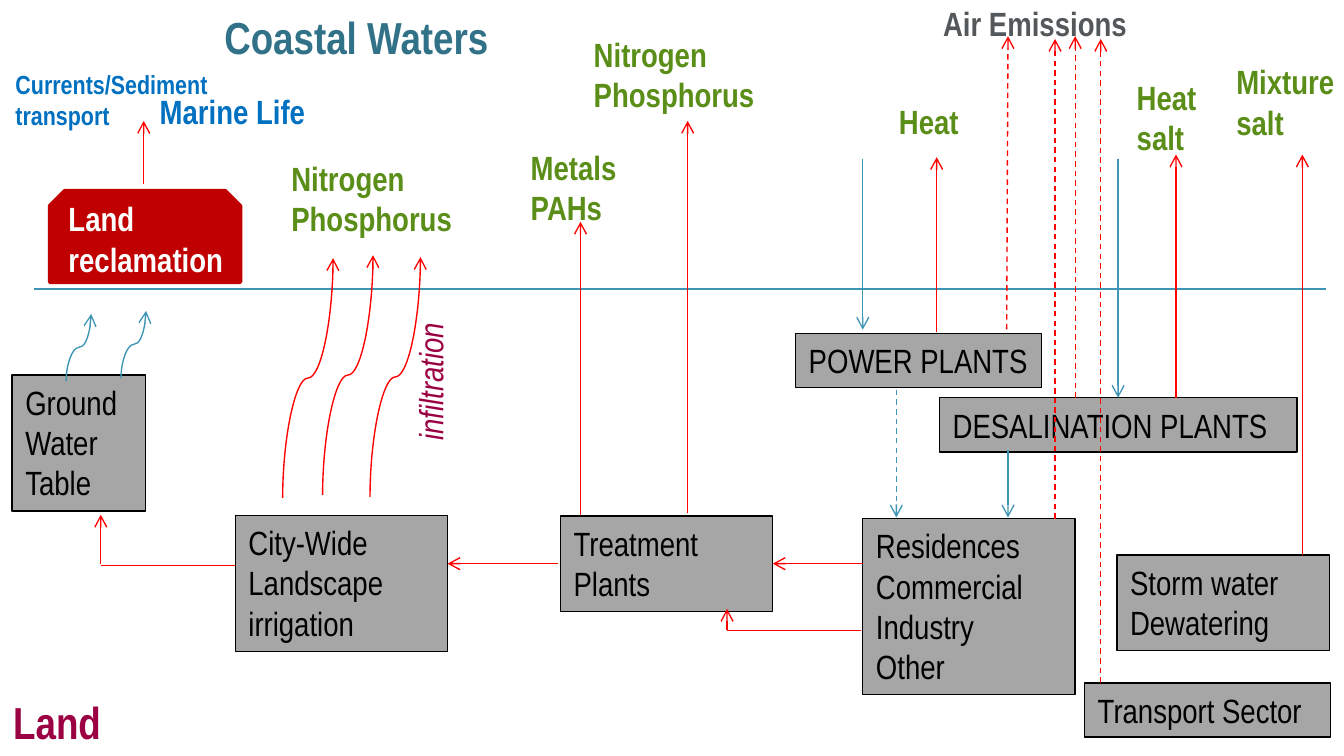
"""Builds a slide of the flows between a city's land uses, coastal waters and air."""
from typing import NamedTuple, Optional

from lxml.etree import SubElement
from pptx import Presentation
from pptx.dml.color import RGBColor
from pptx.enum.dml import MSO_LINE
from pptx.enum.shapes import MSO_CONNECTOR as Link, MSO_SHAPE as Preset
from pptx.enum.text import MSO_ANCHOR as Anchor, MSO_AUTO_SIZE as AutoSize, PP_ALIGN as Align
from pptx.oxml.ns import qn
from pptx.util import Pt

FONT = "Arial Narrow"
COLORS = {
    "black": "000000", "white": "FFFFFF", "gray": "A6A6A6", "slate": "54585A",
    "red": "FF0000", "dark_red": "C00000", "teal": "3E96B4", "deep_teal": "327288",
    "green": "5A8E18", "blue": "0070C0", "plum": "9B0042",
}


class Box(NamedTuple):
    text: str
    left: float
    top: float
    width: float
    height: float


class Label(NamedTuple):
    text: str
    left: float
    top: float
    width: float
    height: float
    color: str = "green"
    size: float = 18


class Flow(NamedTuple):
    x1: float
    y1: float
    x2: float
    y2: float
    color: str = "red"
    dashed: bool = False
    arrow: bool = True
    target: Optional[str] = None
    side: int = 0


class Curve(NamedTuple):
    x: float
    bottom: float
    rise: float
    run: float
    color: str


TITLE = Label("Coastal Waters", 113, 1.4, 198, 36, "deep_teal", 24)
RECLAMATION = Box("Land reclamation", 26.6, 102.2, 102.2, 49)
INFILTRATION = Label("infiltration", 216, 172, 36, 71.3, "plum")

BOXES = [
    Box("POWER PLANTS", 426.2, 178.6, 131.8, 29),
    Box("DESALINATION PLANTS", 503.3, 213.1, 191.5, 29),
    Box("Residences\nCommercial\nIndustry\nOther", 462.2, 277.9, 113.8, 94.3),
    Box("Treatment Plants", 300.2, 276.5, 113.8, 51),
    Box("City-Wide Landscape irrigation", 126, 276, 113.8, 73),
    Box("Ground Water Table", 6.5, 201, 71.5, 72.9),
    Box("Storm water\nDewatering", 598.3, 297.4, 113.8, 51),
    Box("Transport Sector", 581, 365.8, 131.8, 29),
]

LABELS = [
    Label("Land", 0, 368.6, 198, 36, "plum", 24),
    Label("Nitrogen Phosphorus", 311, 14.4, 113.8, 51),
    Label("Nitrogen Phosphorus", 149, 80.8, 113.8, 51),
    Label("Heat", 474.5, 50.4, 55.4, 29),
    Label("Heat salt", 601.9, 37.4, 55.4, 51),
    Label("Mixture\vsalt", 655.2, 29.2, 70.6, 51),
    Label("Metals\nPAHs", 277.2, 74.9, 63.4, 51),
    Label("Marine Life", 78.5, 45.4, 113.8, 29, "blue"),
    Label("Currents/Sediment transport", 1.2, 33.1, 121.7, 41, "blue", 14),
    Label("Air Emissions", 498.2, -2.2, 126.7, 29, "slate"),
]

FLOWS = [
    Flow(18, 154.8, 710.6, 154.8, "teal", arrow=False),
    Flow(462.2, 85, 462.2, 176.6, "teal"),
    Flow(599, 85, 599, 213.1, "teal"),
    Flow(480.2, 208.8, 480.2, 277.2, "teal", dashed=True),
    Flow(540, 241.2, 540, 277.2, "teal"),
    Flow(462.2, 302, 414, 302, target="Treatment Plants", side=3),
    Flow(298.8, 302, 239.8, 302),
    Flow(368.4, 275, 368.4, 64.8),
    Flow(501.8, 177.8, 501.8, 84.2),
    Flow(630, 213.1, 630, 82.8),
    Flow(311, 275.8, 311, 118.8),
    Flow(697.7, 297.4, 697.7, 82.8),
    Flow(77, 98.6, 77, 64.8),
    Flow(54, 303.1, 126, 303.1, arrow=False),
    Flow(54, 302, 54, 275.8),
    Flow(389.5, 337.7, 461.5, 337.7, arrow=False),
    Flow(389.5, 337.7, 389.5, 326.2),
    Flow(539.3, 176.4, 540, 19.4, dashed=True),
    Flow(576, 213.1, 576, 19.4, dashed=True),
    Flow(565.2, 277.9, 565.2, 20.9, dashed=True),
    Flow(589.7, 365.8, 589.7, 20.9, dashed=True),
]

CURVES = [
    Curve(151.4, 266.8, 128.4, 27, "red"),
    Curve(172.8, 265.2, 128.4, 27, "red"),
    Curve(198.2, 266.2, 128.4, 27, "red"),
    Curve(64.8, 202.6, 36, 13.4, "teal"),
    Curve(35.4, 204.2, 36, 13.4, "teal"),
]


def rgb(name: str) -> RGBColor:
    return RGBColor.from_string(COLORS[name])


def write(shape, text: str, color: str, size: float = 18, bold: bool = False, italic: bool = False) -> None:
    frame = shape.text_frame
    frame.text = text
    frame.word_wrap = True
    frame.auto_size = AutoSize.NONE
    frame.vertical_anchor = Anchor.TOP
    frame.margin_right = Pt(3.6)
    for paragraph in frame.paragraphs:
        paragraph.alignment = Align.LEFT
        for run in paragraph.runs:
            font = run.font
            font.name, font.size, font.bold, font.italic = FONT, Pt(size), bold, italic
            font.color.rgb = rgb(color)


def draw_box(slide, box: Box, preset=Preset.RECTANGLE, fill: str = "gray", outline: str = "black", weight: float = 0.75):
    shape = slide.shapes.add_shape(preset, Pt(box.left), Pt(box.top), Pt(box.width), Pt(box.height))
    shape.shadow.inherit = False
    shape.fill.solid()
    shape.fill.fore_color.rgb = rgb(fill)
    shape.line.color.rgb = rgb(outline)
    shape.line.width = Pt(weight)
    write(shape, box.text, "black")
    return shape


def draw_label(slide, label: Label, italic: bool = False):
    shape = slide.shapes.add_textbox(Pt(label.left), Pt(label.top), Pt(label.width), Pt(label.height))
    write(shape, label.text, label.color, label.size, bold=not italic, italic=italic)
    return shape


def style_line(connector, color: str, dashed: bool = False, arrow: bool = True) -> None:
    connector.line.color.rgb = rgb(color)
    connector.line.width = Pt(0.75)
    if dashed:
        connector.line.dash_style = MSO_LINE.DASH
    properties = connector._element.spPr
    if arrow:
        SubElement(properties.find(qn("a:ln")), qn("a:tailEnd"), type="arrow")
    SubElement(properties, qn("a:effectLst"))


def draw_flow(slide, flow: Flow, boxes: dict) -> None:
    connector = slide.shapes.add_connector(Link.STRAIGHT, Pt(flow.x1), Pt(flow.y1), Pt(flow.x2), Pt(flow.y2))
    if flow.target:
        connector.end_connect(boxes[flow.target], flow.side)
    style_line(connector, flow.color, flow.dashed, flow.arrow)


def draw_curve(slide, curve: Curve) -> None:
    x, y = curve.x + curve.run / 2, curve.bottom - curve.rise / 2
    across, down = curve.rise / 2, curve.run / 2
    connector = slide.shapes.add_connector(Link.CURVE, Pt(x + across), Pt(y + down), Pt(x - across), Pt(y - down))
    connector._element.spPr.find(qn("a:xfrm")).set("rot", "5400000")
    style_line(connector, curve.color)


def main() -> None:
    presentation = Presentation()
    presentation.slide_width, presentation.slide_height = Pt(720), Pt(405)
    slide = presentation.slides.add_slide(presentation.slide_layouts[5])
    title = slide.shapes.title
    title.left, title.top, title.width, title.height = map(Pt, TITLE[1:5])
    write(title, TITLE.text, TITLE.color, TITLE.size, bold=True)

    boxes = {box.text: draw_box(slide, box) for box in BOXES}
    for flow in FLOWS:
        draw_flow(slide, flow, boxes)
    for curve in CURVES:
        draw_curve(slide, curve)
    for label in LABELS:
        draw_label(slide, label)

    reclamation = draw_box(slide, RECLAMATION, Preset.SNIP_2_SAME_RECTANGLE, "dark_red", "dark_red", 2)
    write(reclamation, RECLAMATION.text, "white", bold=True)
    frame = reclamation.text_frame
    frame.margin_left, frame.margin_top, frame.margin_right, frame.margin_bottom = Pt(6), 0, 0, 0

    infiltration = draw_label(slide, INFILTRATION, italic=True)
    infiltration.text_frame.word_wrap = False
    infiltration.text_frame._txBody.bodyPr.set("vert", "vert270")
    presentation.save("out.pptx")


if __name__ == "__main__":
    main()
